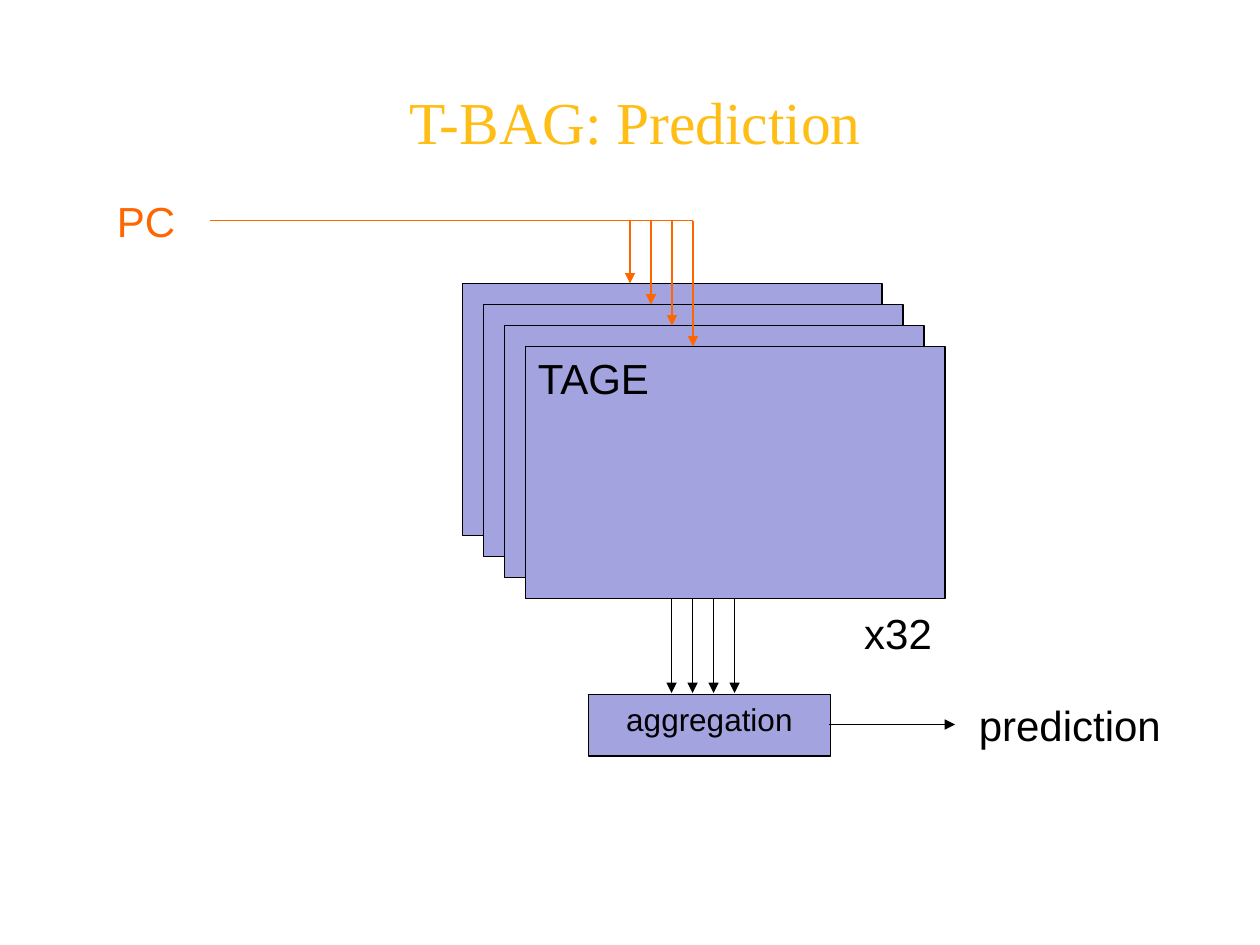
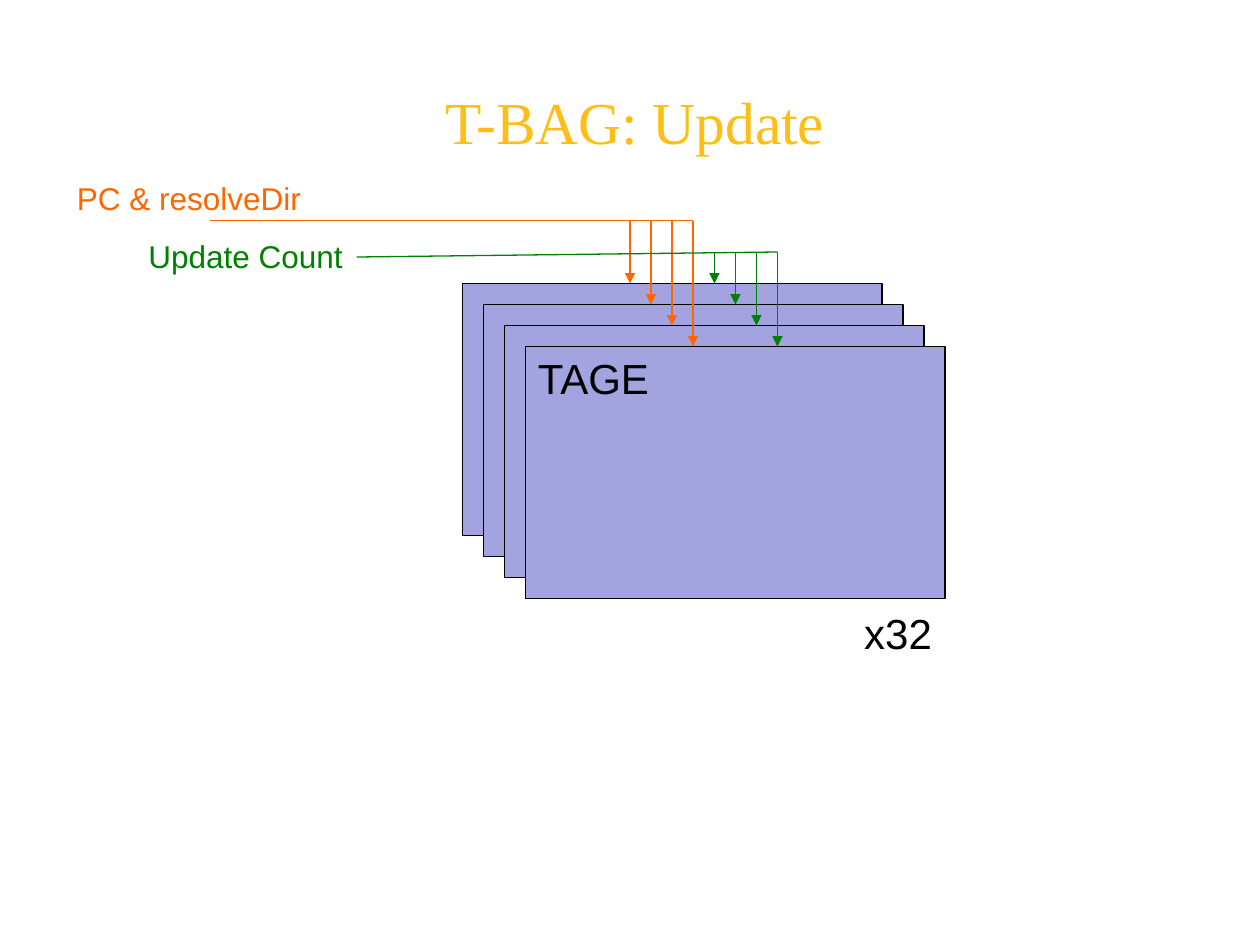
import pptx
import pptx.util
import pptx.dml.color
import pptx.enum.shapes
import pptx.enum.text
import pptx.oxml
import pptx.oxml.ns

Inches = pptx.util.Inches
RGB = pptx.dml.color.RGBColor
ALIGN = pptx.enum.text.PP_ALIGN
ANCHOR = pptx.enum.text.MSO_ANCHOR

BLACK = RGB(0x00, 0x00, 0x00)
GOLD = RGB(0xFF, 0xBE, 0x15)
LILAC = RGB(0xA3, 0xA3, 0xE0)
ORANGE = RGB(0xFF, 0x66, 0x00)
GREEN = RGB(0x00, 0x80, 0x00)

# Content: labels are (text, box, format); a bus is (colour, line start, first drop x, y)
PC_BUS = (ORANGE, (1.67, 1.75), 5, 1.75)
COUNT_BUS = (GREEN, (2.83, 2.04), 5.67, 2)
SLIDES = [
    {"title": "T-BAG: Prediction",
     "labels": [("PC", (0.83, 1.5, 0.83, 0.5), {"color": ORANGE}),
                ("prediction", (7.67, 5.5, 2.33, 0.5), {})],
     "buses": [PC_BUS],
     "result": "aggregation"},
    {"title": "T-BAG: Update",
     "labels": [("PC & resolveDir", (0.5, 1.37, 2, 0.4),
                 {"size": 18, "color": ORANGE, "align": ALIGN.CENTER}),
                ("Update Count", (1.08, 1.83, 1.8, 0.4),
                 {"size": 18, "color": GREEN})],
     "buses": [PC_BUS, COUNT_BUS],
     "result": None},
]
TABLE = "TAGE"
COUNT = ("x32", (6.76, 4.77, 0.82, 0.5), {})

# Stack of tables: each one is a step right and down from the last
LAYERS = 4
STEP = 1 / 6
LEFT, TOP, WIDTH, HEIGHT = 3.67, 2.25, 3.33, 2
BASE = TOP + (LAYERS - 1) * STEP + HEIGHT


def place(*box):
    return [Inches(v) for v in box]


def write(shape, text, size=24, color=BLACK, font="Arial",
          align=ALIGN.LEFT, anchor=ANCHOR.TOP):
    frame = shape.text_frame
    frame.word_wrap = True
    frame.vertical_anchor = anchor
    para = frame.paragraphs[0]
    para.alignment = align
    run = para.add_run()
    run.text = text
    run.font.size = pptx.util.Pt(size)
    run.font.name = font
    run.font.color.rgb = color
    return run


def add_title(slide, text):
    title = slide.shapes.title
    title.left, title.top, title.width, title.height = place(0.5, 0.33, 9.08, 1.25)
    run = write(title, text, size=34, color=GOLD, font="Times New Roman",
                align=ALIGN.CENTER, anchor=ANCHOR.MIDDLE)
    # Text shadow goes right after the fill
    shade = pptx.oxml.parse_xml(
        '<a:effectLst %s><a:outerShdw dist="35921" dir="2700000">'
        '<a:srgbClr val="000000"/></a:outerShdw></a:effectLst>'
        % pptx.oxml.ns.nsdecls("a"))
    fill = run.font._element.find(pptx.oxml.ns.qn("a:solidFill"))
    fill.addnext(shade)


def add_label(slide, text, box, style):
    write(slide.shapes.add_textbox(*place(*box)), text, **style)


def add_box(slide, *box):
    shape = slide.shapes.add_shape(
        pptx.enum.shapes.MSO_SHAPE.RECTANGLE, *place(*box))
    shape.shadow.inherit = False
    shape.fill.solid()
    shape.fill.fore_color.rgb = LILAC
    shape.line.color.rgb = BLACK
    shape.line.width = pptx.util.Pt(0.75)
    return shape


def add_line(shapes, start, end, color=BLACK, arrow=True):
    line = shapes.add_connector(
        pptx.enum.shapes.MSO_CONNECTOR.STRAIGHT, *place(*start, *end))
    line.line.color.rgb = color
    line.line.width = pptx.util.Pt(0.75)
    if arrow:
        tip = line.line._get_or_add_ln().makeelement(
            pptx.oxml.ns.qn("a:tailEnd"), {"type": "triangle"})
        line.line._get_or_add_ln().append(tip)
    props = line._element.spPr
    props.append(props.makeelement(pptx.oxml.ns.qn("a:effectLst"), {}))


def add_stack(slide):
    for i in range(LAYERS):
        box = add_box(slide, LEFT + i * STEP, TOP + i * STEP, WIDTH, HEIGHT)
    write(box, TABLE)


def add_bus(slide, color, start, first, y):
    shapes = slide.shapes.add_group_shape().shapes
    add_line(shapes, start, (first + (LAYERS - 1) * STEP, y), color, arrow=False)
    for i in range(LAYERS):
        x = first + i * STEP
        add_line(shapes, (x, y), (x, TOP + i * STEP), color)


def add_result(slide, text):
    for i in range(LAYERS):
        x = 5.33 + i * STEP
        add_line(slide.shapes, (x, BASE), (x, 5.5))
    write(add_box(slide, 4.67, 5.51, 1.92, 0.49), text, size=18, align=ALIGN.CENTER)
    add_line(slide.shapes, (6.58, 5.75), (7.58, 5.75))


def main():
    deck = pptx.Presentation()
    deck.slide_width, deck.slide_height = place(10, 7.5)
    for page in SLIDES:
        slide = deck.slides.add_slide(deck.slide_layouts[5])
        add_title(slide, page["title"])
        add_stack(slide)
        for label in [COUNT] + page["labels"]:
            add_label(slide, *label)
        for bus in page["buses"]:
            add_bus(slide, *bus)
        if page["result"]:
            add_result(slide, page["result"])
    deck.save("out.pptx")


if __name__ == "__main__":
    main()
